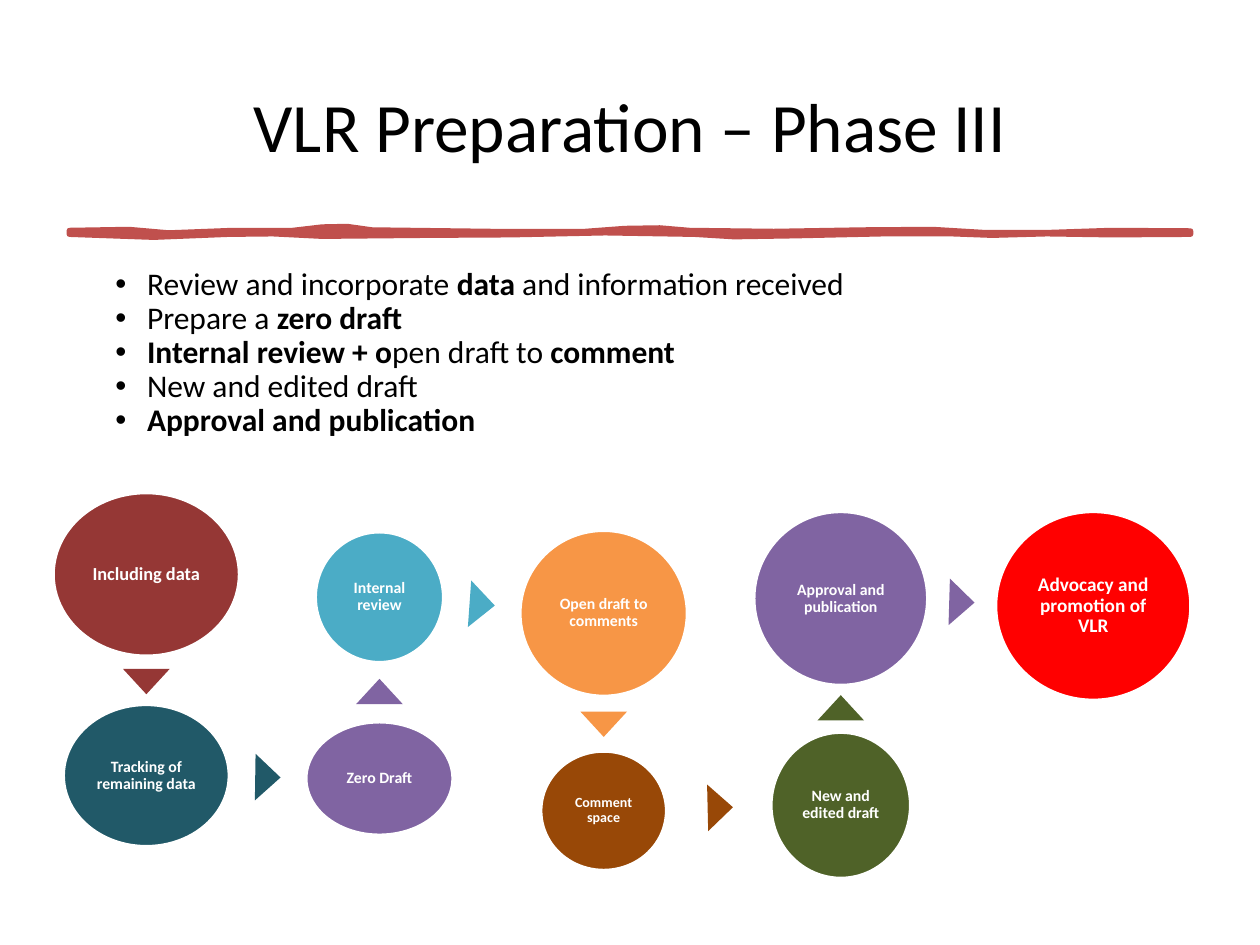
from pptx import Presentation
from pptx.dml.color import RGBColor
from pptx.enum.shapes import MSO_SHAPE
from pptx.enum.text import MSO_ANCHOR, MSO_AUTO_SIZE, PP_ALIGN
from pptx.util import Cm, Pt


def paint(fmt, color):
    """Give a fill or a font a solid colour."""
    if hasattr(fmt, "solid"):
        fmt.solid()
        fmt.fore_color.rgb = RGBColor.from_string(color)
    else:
        fmt.color.rgb = RGBColor.from_string(color)


def style(para, size, color):
    para.line_spacing = 0.9
    para.space_before = Pt(0)
    for run in para.runs:
        run.font.name = "Calibri"
        run.font.size = Pt(size)
        paint(run.font, color)


deck = Presentation()
deck.slide_width, deck.slide_height = Cm(25.4), Cm(19.05)
slide = deck.slides.add_slide(deck.slide_layouts[1])
shapes = slide.shapes

# Title
title = shapes.title
title.left, title.top, title.width, title.height = Cm(1.75), Cm(1.02), Cm(21.9), Cm(3.68)
frame = title.text_frame
frame.text = "VLR Preparation – Phase III"
frame.auto_size = MSO_AUTO_SIZE.NONE
frame.vertical_anchor = MSO_ANCHOR.MIDDLE
frame.margin_bottom = Cm(0.6)
frame.paragraphs[0].alignment = PP_ALIGN.CENTER
style(frame.paragraphs[0], 39.6, "000000")

# Hand-drawn rule: upper edge from the left, lower edge back
upper = [(1.4, 4.65), (2.6, 4.63), (3.4, 4.7), (4.7, 4.65), (5.9, 4.65),
         (6.5, 4.58), (7, 4.57), (7.5, 4.64), (9.9, 4.67), (11.8, 4.67),
         (12.6, 4.61), (13.3, 4.6), (13.9, 4.65), (15.6, 4.67), (17.4, 4.64),
         (18.8, 4.63), (19.8, 4.69), (21.2, 4.69), (22.4, 4.65), (24, 4.66)]
lower = [(24, 4.72), (22.4, 4.73), (21.1, 4.71), (20, 4.74), (19.2, 4.71),
         (17.8, 4.71), (16, 4.75), (14.8, 4.77), (14, 4.72), (12.2, 4.69),
         (10.3, 4.73), (8.6, 4.74), (6.5, 4.76), (5.5, 4.71), (4.6, 4.72),
         (3.1, 4.78), (1.4, 4.72)]
edge = [(Cm(x), Cm(y)) for x, y in upper + lower]
pen = shapes.build_freeform(*edge[0])
pen.add_line_segments(edge[1:], close=True)
rule = pen.convert_to_shape()
rule.shadow.inherit = False
paint(rule.fill, "C0504D")
paint(rule.line.fill, "C0504D")
rule.line.width = Pt(3.25)

# Bullet list: (text, bold) pieces for each line
steps = [
    [("Review and incorporate ", False), ("data", True),
     (" and information received", False)],
    [("Prepare a ", False), ("zero draft", True)],
    [("Internal review + o", True), ("pen draft to", False), (" comment", True)],
    [("New and edited draft", False)],
    [("Approval and publication", True)],
]
body = slide.placeholders[1]
body.left, body.top, body.width, body.height = Cm(1.75), Cm(5.28), Cm(21.9), Cm(11.89)
frame = body.text_frame
frame.auto_size = MSO_AUTO_SIZE.NONE
for i, step in enumerate(steps):
    para = frame.paragraphs[0] if i == 0 else frame.add_paragraph()
    for text, bold in step:
        run = para.add_run()
        run.text = text
        run.font.bold = bold
    style(para, 18, "000000")
    props = para._p.get_or_add_pPr()
    props.set("marL", str(Cm(0.96)))
    props.set("indent", str(-Cm(0.64)))

# Flow of ellipses: text, size, colour, centre x, top, width, height
wine, teal, plum, sky = "953735", "215968", "8064A2", "4BACC6"
gold, rust, moss, red = "F79646", "984807", "4F6228", "FF0000"
cols = [2.95, 7.65, 12.17, 16.95, 22.04]
stages = [
    ("Including data", 10.5, wine, cols[0], 9.93, 3.76, 3.3),
    ("Tracking of remaining data", 9, teal, cols[0], 14.2, 3.35, 2.87),
    ("Zero Draft", 9, plum, cols[1], 14.55, 2.97, 2.29),
    ("Internal review", 9, sky, cols[1], 10.72, 2.59, 2.64),
    ("Open draft to comments", 9, gold, cols[2], 10.69, 3.38, 3.35),
    ("Comment space", 8, rust, cols[2], 15.14, 2.54, 2.41),
    ("New and edited draft", 9, moss, cols[3], 14.76, 2.82, 2.95),
    ("Approval and publication", 9, plum, cols[3], 10.31, 3.51, 3.51),
    ("Advocacy and promotion of VLR", 11, red, cols[4], 10.31, 3.94, 3.81),
]
for text, size, color, mid, top, wide, high in stages:
    oval = shapes.add_shape(MSO_SHAPE.OVAL, Cm(mid - wide / 2), Cm(top), Cm(wide), Cm(high))
    oval.shadow.inherit = False
    paint(oval.fill, color)
    paint(oval.line.fill, "FFFFFF")
    oval.line.width = Pt(2)
    frame = oval.text_frame
    frame.text = text
    frame.word_wrap = True
    frame.vertical_anchor = MSO_ANCHOR.MIDDLE
    frame.margin_left = frame.margin_right = Cm(0.02)
    frame.margin_top = frame.margin_bottom = Cm(0.02)
    para = frame.paragraphs[0]
    para.alignment = PP_ALIGN.CENTER
    para.font.bold = True
    para.runs[0].font.bold = True
    style(para, size, "FFFFFF")

# Arrowheads between stages: colour, centre x, centre y, turn
heads = [
    (wine, cols[0], 13.74, 180), (teal, 5.4, 15.67, 90.9),
    (plum, cols[1], 13.94, 0), (sky, 9.72, 12.19, 94.1),
    (gold, cols[2], 14.6, 180), (rust, 14.52, 16.28, 88.6),
    (moss, cols[3], 14.27, 0), (plum, 19.39, 12.14, 91.7),
]
wide, high = 0.94, 0.51
for color, x, y, turn in heads:
    head = shapes.add_shape(MSO_SHAPE.ISOSCELES_TRIANGLE, Cm(x - wide / 2),
                            Cm(y - high / 2), Cm(wide), Cm(high))
    head.rotation = turn
    head.shadow.inherit = False
    paint(head.fill, color)
    head.line.fill.background()

deck.save("out.pptx")
